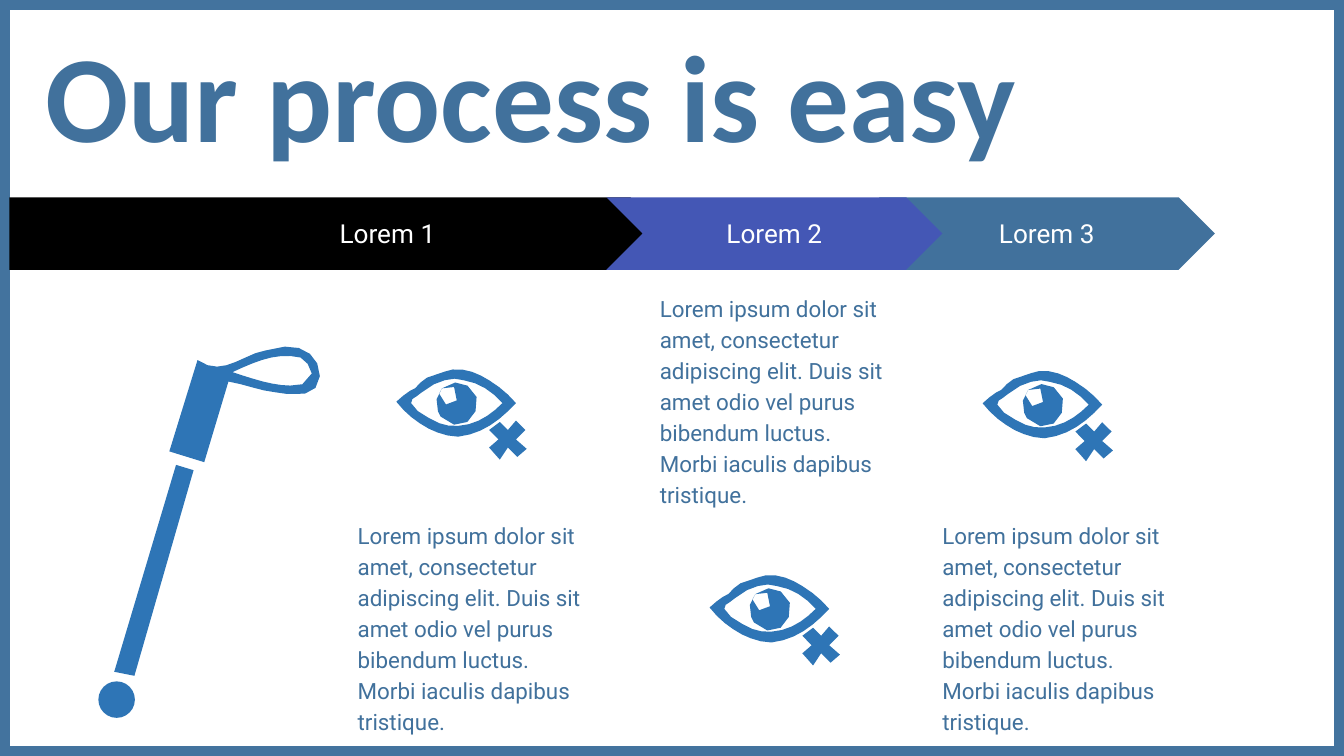
from math import dist

from pptx import Presentation
from pptx.dml.color import RGBColor
from pptx.enum.shapes import MSO_SHAPE
from pptx.enum.text import MSO_ANCHOR, PP_ALIGN
from pptx.util import Cm, Pt

RECTANGLE, OVAL = MSO_SHAPE.RECTANGLE, MSO_SHAPE.OVAL
PENTAGON, CHEVRON = MSO_SHAPE.PENTAGON, MSO_SHAPE.CHEVRON
TOP, MIDDLE = MSO_ANCHOR.TOP, MSO_ANCHOR.MIDDLE
LEFT, CENTER = PP_ALIGN.LEFT, PP_ALIGN.CENTER

BLACK = RGBColor(0x00, 0x00, 0x00)
WHITE = RGBColor(0xFF, 0xFF, 0xFF)
STEEL = RGBColor(0x41, 0x71, 0x9C)
FRAME = RGBColor(0x43, 0x73, 0x9E)
INDIGO = RGBColor(0x44, 0x57, 0xB5)
ICON_BLUE = RGBColor(0x2E, 0x75, 0xB6)

TITLE_FONT = {"name": "Calibri", "size": Pt(66), "bold": True}
STEP_FONT = {"name": "Roboto", "size": Pt(14)}
CAPTION_FONT = {"name": "Roboto", "size": Pt(12)}
CAPTION = ("Lorem ipsum dolor sit amet, consectetur adipiscing elit. Duis sit "
           "amet odio vel purus bibendum luctus. Morbi iaculis dapibus tristique.")

# Steps, back to front: label, shape, left, width, fill, left inset, caption left and top
STEPS = [
    ("Lorem 3", CHEVRON, 16.61, 6.35, STEEL, 0.25, 17.81, 9.8),
    ("Lorem 1", PENTAGON, 0.18, 12.42, BLACK, 2.46, 6.76, 9.8),
    ("Lorem 2", CHEVRON, 11.46, 6.35, INDIGO, 0.25, 12.47, 5.51),
]
EYE_POSITIONS = [(7.49, 6.96), (13.41, 10.85), (18.57, 6.99)]

# Icon outlines in hundredths of an inch; curves are a start point, then
# two control points and an end point for each cubic segment
ICON_UNIT = 0.0254
CHORD = 8
EYE_OUTLINE = [
    (89, 26), (77, 39), (64, 49), (46, 51), (38, 51), (30, 48), (24, 45),
    (15, 40), (7, 34), (0, 25), (4, 22), (6, 19), (10, 17),
    (11, 16), (13, 16), (14, 15), (17, 12), (19, 9), (23, 7),
    (25, 6), (27, 5), (29, 5), (34, 3), (38, 2), (42, 1),
    (52, 0), (61, 4), (69, 9), (77, 14), (83, 19), (89, 26),
]
EYE_OPENING = [
    (12, 23), (11, 24), (10, 25), (11, 26), (11, 29), (13, 31), (16, 32),
    (22, 36), (27, 39), (32, 41), (36, 43), (41, 43), (46, 43),
    (60, 42), (70, 35), (79, 26), (71, 17), (62, 11), (50, 9),
    (46, 8), (41, 7), (36, 9), (34, 10), (31, 11), (28, 12),
    (25, 13), (22, 15), (19, 18), (18, 19), (16, 21), (15, 21),
    (13, 22), (13, 22), (12, 23),
]
PUPIL = [
    (34, 15), (40, 10), (48, 9), (53, 13), (60, 17), (62, 25), (59, 32),
    (57, 39), (50, 43), (43, 42), (39, 41), (35, 39), (33, 36),
    (32, 36), (32, 34), (31, 32), (28, 29), (30, 26), (30, 23),
    (30, 19), (32, 17), (34, 15), (33, 17), (33, 17), (32, 19),
    (32, 22), (34, 27), (37, 27), (41, 28), (43, 27), (45, 24),
    (46, 21), (46, 17), (43, 14), (40, 14), (37, 14), (34, 15),
]
CROSS = [(89, 53), (97, 60), (90, 66), (83, 59), (77, 68), (69, 59),
         (76, 53), (69, 46), (77, 40), (83, 46), (89, 39), (96, 46)]
CANE_HANDLE = [
    (147, 268), (160, 277), (170, 272), (183, 266), (192, 261), (203, 260), (212, 258),
    (227, 257), (238, 266), (238, 280), (238, 287), (233, 292), (227, 293),
    (221, 293), (213, 294), (205, 292), (194, 291), (182, 286), (170, 284),
]
CANE_GRIP = [(152, 344), (126, 336)]
CANE_LOOP = [
    (173, 277), (188, 282), (203, 287), (216, 287), (219, 287), (223, 287), (225, 286),
    (230, 285), (232, 282), (232, 278), (230, 270), (225, 264), (216, 265),
    (202, 264), (188, 270), (173, 277),
]
CANE_SHAFT = [(100, 503), (85, 500), (131, 346), (144, 350)]


def curve(points):
    """Turn a chain of cubic segments into points about one chord apart."""
    outline = [points[0]]
    for first in range(0, len(points) - 1, 3):
        segment = points[first:first + 4]
        count = max(1, round(dist(segment[0], segment[3]) / CHORD))
        for step in range(1, count + 1):
            t = step / count
            weights = ((1 - t) ** 3, 3 * t * (1 - t) ** 2, 3 * t * t * (1 - t), t ** 3)
            outline.append(tuple(sum(weight * point[axis] for weight, point in zip(weights, segment))
                                 for axis in (0, 1)))
    return outline


def paint(shape, color):
    shape.shadow.inherit = False
    shape.fill.solid()
    shape.fill.fore_color.rgb = color
    shape.line.fill.background()


def write_text(shape, text, font, color, alignment=LEFT, anchor=TOP, spacing=1.0, insets=(0, 0, 0, 0)):
    frame = shape.text_frame
    frame.word_wrap = True
    frame.vertical_anchor = anchor
    for side, inset in zip(("left", "top", "right", "bottom"), insets):
        setattr(frame, f"margin_{side}", Cm(inset))
    paragraph = frame.paragraphs[0]
    paragraph.alignment = alignment
    paragraph.line_spacing = spacing
    run = paragraph.add_run()
    run.text = text
    for name, value in font.items():
        setattr(run.font, name, value)
    run.font.color.rgb = color


def add_shape(slide, kind, left, top, width, height, color):
    shape = slide.shapes.add_shape(kind, Cm(left), Cm(top), Cm(width), Cm(height))
    paint(shape, color)
    return shape


def add_text(slide, left, top, width, height, text, font, **layout):
    box = slide.shapes.add_textbox(Cm(left), Cm(top), Cm(width), Cm(height))
    write_text(box, text, font, STEEL, **layout)


def add_outline(slide, contours, left=0, top=0):
    placed = [[(Cm(left + x * ICON_UNIT), Cm(top + y * ICON_UNIT)) for x, y in contour]
              for contour in contours]
    builder = slide.shapes.build_freeform(*placed[0][0])
    for index, contour in enumerate(placed):
        if index:
            builder.move_to(*contour[0])
        builder.add_line_segments(contour[1:], close=True)
    paint(builder.convert_to_shape(), ICON_BLUE)


def add_frame(slide, width, height):
    frame = slide.shapes.add_shape(RECTANGLE, 0, 0, width, height)
    frame.shadow.inherit = False
    frame.fill.background()
    frame.line.color.rgb = FRAME
    frame.line.width = Pt(10.75)


def add_step(slide, label, kind, left, width, color, inset, caption_left, caption_top):
    arrow = add_shape(slide, kind, left, 3.73, width, 1.37, color)
    write_text(arrow, label, STEP_FONT, WHITE, CENTER, MIDDLE, insets=(inset, 0.25, 0.25, 0.25))
    add_text(slide, caption_left, caption_top, 4.29, 5.36, CAPTION, CAPTION_FONT, spacing=1.15)


def add_eye(slide, left, top):
    add_outline(slide, [curve(EYE_OUTLINE), curve(EYE_OPENING)], left, top)
    add_outline(slide, [CROSS], left, top)
    add_outline(slide, [curve(PUPIL)], left, top)


def add_cane(slide):
    add_outline(slide, [curve(CANE_HANDLE) + CANE_GRIP, curve(CANE_LOOP)])
    add_outline(slide, [CANE_SHAFT])
    add_shape(slide, OVAL, 1.86, 12.88, 0.69, 0.69, ICON_BLUE)


def main():
    presentation = Presentation()
    presentation.slide_width, presentation.slide_height = Cm(25.4), Cm(14.29)
    slide = presentation.slides.add_slide(presentation.slide_layouts[6])

    # Frame and title
    add_frame(slide, presentation.slide_width, presentation.slide_height)
    add_text(slide, 0.86, 0.56, 21.89, 2.77, "Our process is easy", TITLE_FONT,
             anchor=MIDDLE, spacing=0.9)

    # Process arrows with captions
    for step in STEPS:
        add_step(slide, *step)

    # Icons
    add_cane(slide)
    for left, top in EYE_POSITIONS:
        add_eye(slide, left, top)

    presentation.save("out.pptx")


if __name__ == "__main__":
    main()
